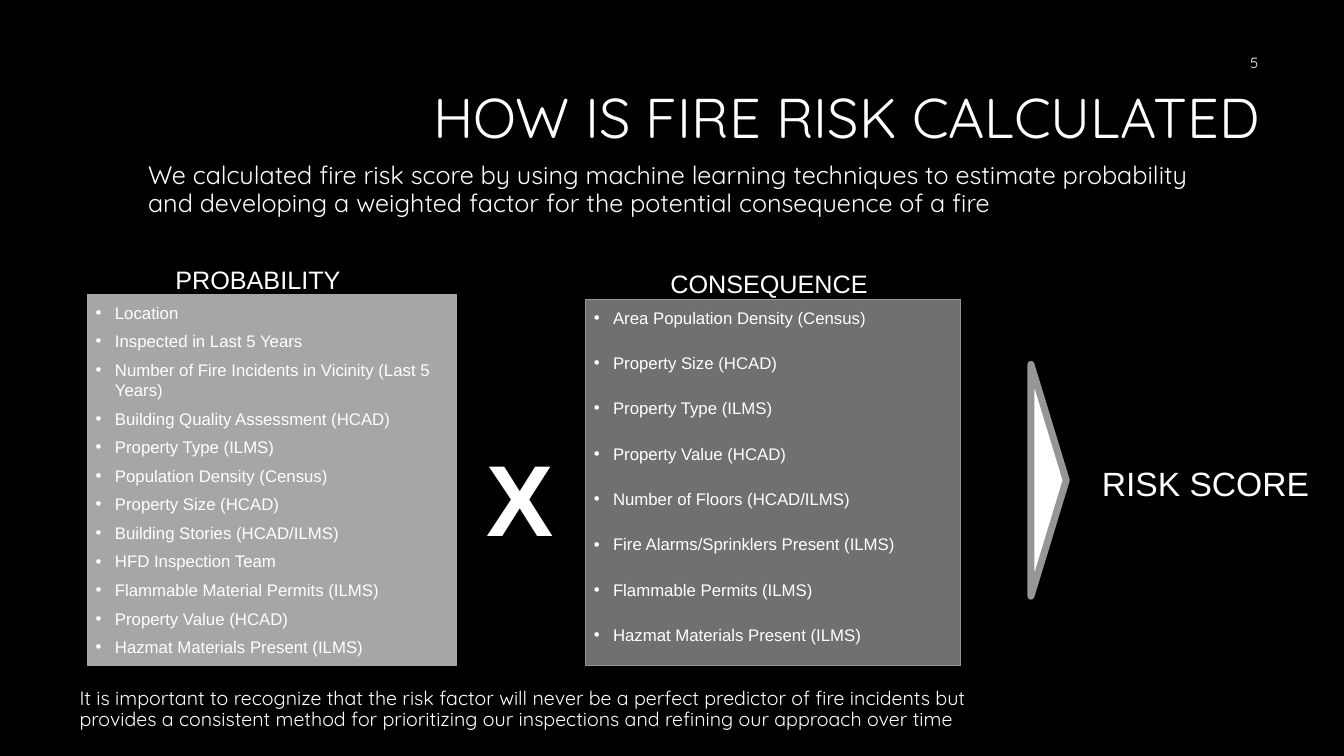
from dataclasses import dataclass

from lxml import etree
from pptx import Presentation
from pptx.dml.color import RGBColor
from pptx.enum.shapes import MSO_SHAPE
from pptx.enum.text import MSO_ANCHOR, PP_ALIGN
from pptx.oxml.ns import qn
from pptx.util import Inches, Pt

RECTANGLE = MSO_SHAPE.RECTANGLE
TRIANGLE = MSO_SHAPE.ISOSCELES_TRIANGLE
TOP, MIDDLE = MSO_ANCHOR.TOP, MSO_ANCHOR.MIDDLE
LEFT, RIGHT = PP_ALIGN.LEFT, PP_ALIGN.RIGHT


@dataclass(frozen=True)
class Theme:
    """Colours, fonts and type sizes of the slide."""
    background: str = "000000"
    text: str = "FFFFFF"
    probability: str = "A6A6A6"
    consequence: str = "707070"
    outline: str = "969696"
    display_font: str = "Quicksand"
    label_font: str = "Arial"
    title: float = 40
    lead: float = 18
    caveat: float = 14
    number: float = 10.5
    heading: float = 18
    factor: float = 12
    operator: float = 72
    result: float = 24


THEME = Theme()

PROBABILITY_FACTORS = [
    "Location",
    "Inspected in Last 5 Years",
    "Number of Fire Incidents in Vicinity (Last 5 Years)",
    "Building Quality Assessment (HCAD)",
    "Property Type (ILMS)",
    "Population Density (Census)",
    "Property Size (HCAD)",
    "Building Stories (HCAD/ILMS)",
    "HFD Inspection Team",
    "Flammable Material Permits (ILMS)",
    "Property Value (HCAD)",
    "Hazmat Materials Present (ILMS)",
]
CONSEQUENCE_FACTORS = [
    "Area Population Density (Census)",
    "Property Size (HCAD)",
    "Property Type (ILMS)",
    "Property Value (HCAD)",
    "Number of Floors (HCAD/ILMS)",
    "Fire Alarms/Sprinklers Present (ILMS)",
    "Flammable Permits (ILMS)",
    "Hazmat Materials Present (ILMS)",
]


def rgb(value):
    """Turn a hex string into a colour."""
    return RGBColor.from_string(value)


def style_font(font, size, name):
    """Apply the slide's text colour with a size and a typeface."""
    font.size = Pt(size)
    font.name = name
    font.color.rgb = rgb(THEME.text)


def add_text(slide, box, text, size, name, wrap=True, align=LEFT, anchor=TOP,
             line_spacing=1.0, bold=False):
    """Add a one-paragraph text box."""
    frame = slide.shapes.add_textbox(*map(Inches, box)).text_frame
    frame.word_wrap = wrap
    frame.vertical_anchor = anchor
    frame.text = text
    paragraph = frame.paragraphs[0]
    paragraph.alignment = align
    paragraph.line_spacing = line_spacing
    font = paragraph.runs[0].font
    style_font(font, size, name)
    font.bold = bold


def add_label(slide, box, text, size, bold=False):
    """Add an unwrapped label of the risk formula."""
    add_text(slide, box, text, size, THEME.label_font, wrap=False, bold=bold)


def add_prose(slide, box, text, size, align=LEFT):
    """Add wrapped text in the display typeface."""
    add_text(slide, box, text, size, THEME.display_font, align=align, line_spacing=0.9)


def add_filled_shape(slide, kind, box, fill, outline, weight):
    """Add a flat preset shape."""
    shape = slide.shapes.add_shape(kind, *map(Inches, box))
    shape.shadow.inherit = False
    shape.fill.solid()
    shape.fill.fore_color.rgb = rgb(fill)
    shape.line.color.rgb = rgb(outline)
    shape.line.width = Pt(weight)
    return shape


def add_bullet(paragraph):
    """Give a paragraph a hanging round bullet."""
    properties = paragraph._p.get_or_add_pPr()
    properties.set("marL", str(Inches(0.19)))
    properties.set("indent", str(-Inches(0.19)))
    etree.SubElement(properties, qn("a:buFont")).set("typeface", THEME.label_font)
    etree.SubElement(properties, qn("a:buChar")).set("char", "•")


def add_factor_panel(slide, box, factors, fill, outline, before, after):
    """Add a filled panel with a bulleted list of factors."""
    frame = add_filled_shape(slide, RECTANGLE, box, fill, outline, 0.5).text_frame
    frame.word_wrap = True
    frame.vertical_anchor = TOP
    frame.margin_left = frame.margin_right = Inches(0.08)
    frame.margin_top = frame.margin_bottom = Inches(0.08)
    frame.text = "\n".join(factors)
    for index, paragraph in enumerate(frame.paragraphs):
        add_bullet(paragraph)
        paragraph.alignment = LEFT
        paragraph.space_before = Pt(before if index else 0)
        paragraph.space_after = Pt(after)
        style_font(paragraph.runs[0].font, THEME.factor, THEME.label_font)


def add_result_pointer(slide):
    """Add the round-cornered triangle pointing to the result."""
    pointer = add_filled_shape(slide, TRIANGLE, (9.25, 4.59, 2.3, 0.35),
                               THEME.text, THEME.outline, 5)
    pointer.rotation = 90
    etree.SubElement(pointer.line._get_or_add_ln(), qn("a:round"))


def main():
    """Build the fire risk slide and save it."""
    deck = Presentation()
    deck.slide_width, deck.slide_height = Inches(13.33), Inches(7.5)
    slide = deck.slides.add_slide(deck.slide_layouts[6])
    slide.background.fill.solid()
    slide.background.fill.fore_color.rgb = rgb(THEME.background)

    add_prose(slide, (3.17, 0.84, 9.42, 1.41), "HOW IS FIRE RISK CALCULATED",
              THEME.title, RIGHT)
    add_factor_panel(slide, (0.87, 2.92, 3.66, 3.68), PROBABILITY_FACTORS,
                     THEME.probability, THEME.probability, before=6, after=0)
    add_label(slide, (1.64, 2.57, 1.92, 0.4), "PROBABILITY", THEME.heading)
    add_factor_panel(slide, (5.81, 2.97, 3.72, 3.63), CONSEQUENCE_FACTORS,
                     THEME.consequence, THEME.outline, before=12, after=6)
    add_label(slide, (6.55, 2.61, 2.18, 0.4), "CONSEQUENCE", THEME.heading)
    add_label(slide, (4.73, 4.27, 0.88, 1.31), "X", THEME.operator, bold=True)
    add_result_pointer(slide)
    add_label(slide, (10.83, 4.54, 2.28, 0.5), "RISK SCORE", THEME.result)
    add_prose(slide, (1.37, 1.57, 10.64, 1.03),
              "We calculated fire risk score by using machine learning techniques to "
              "estimate probability and developing a weighted factor for the potential "
              "consequence of a fire", THEME.lead)
    add_prose(slide, (0.69, 6.78, 9.41, 0.65),
              "It is important to recognize that the risk factor will never be a perfect "
              "predictor of fire incidents but provides a consistent method for "
              "prioritizing our inspections and refining our approach over time",
              THEME.caveat)
    add_text(slide, (9.58, 0.42, 3, 0.4), "5", THEME.number, THEME.display_font,
             align=RIGHT, anchor=MIDDLE)
    deck.save("out.pptx")


if __name__ == "__main__":
    main()
